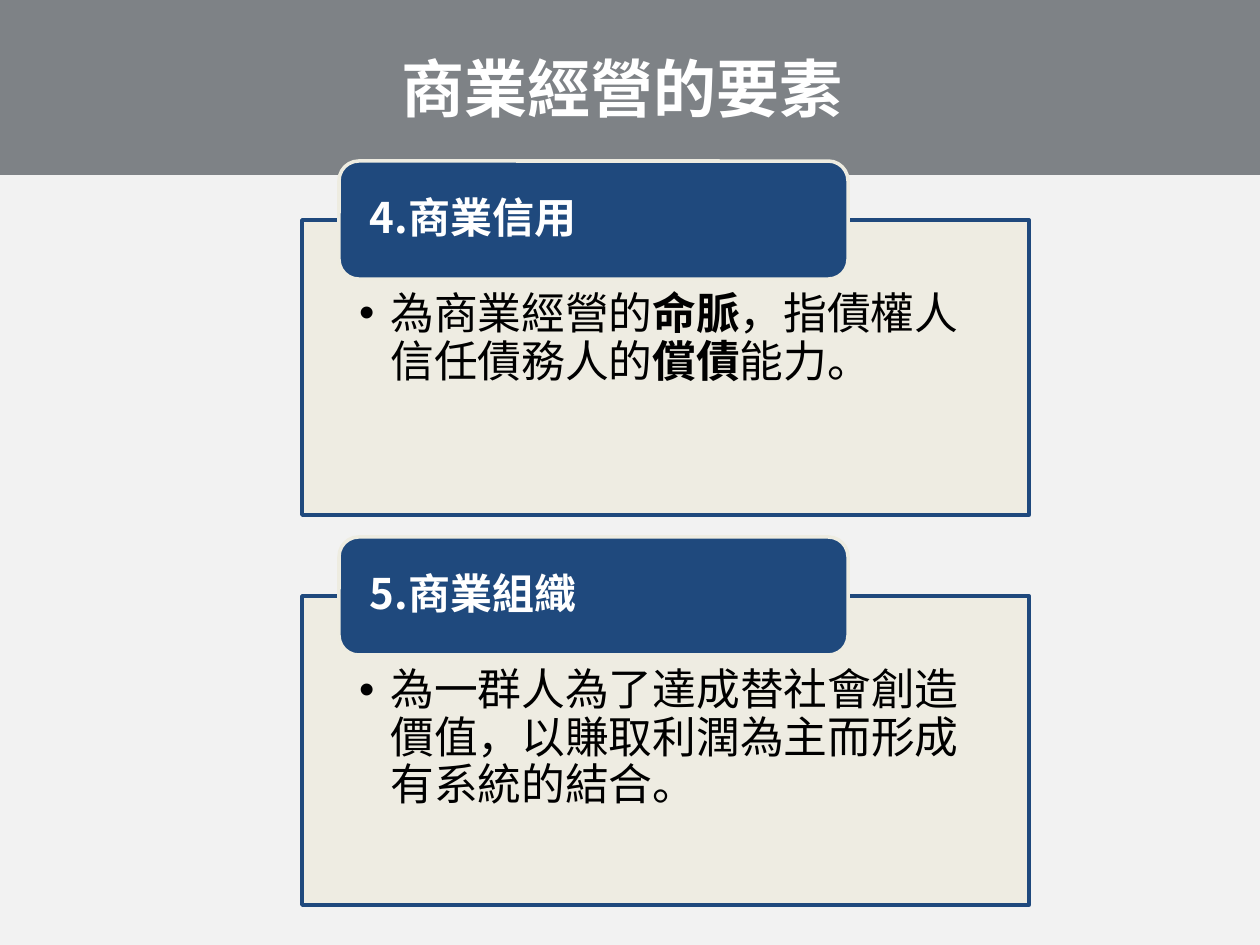
from lxml import etree
from pptx import Presentation, util as u
from pptx.dml.color import RGBColor
from pptx.enum import shapes, text
from pptx.oxml import ns

SCALE = 914400 / 126
FONT = "Noto Sans CJK SC"
PAPER = RGBColor(0xF2, 0xF2, 0xF2)
INK = RGBColor(0x0C, 0x14, 0x1C)
NAVY = RGBColor(0x1F, 0x49, 0x7D)
CREAM = RGBColor(0xEE, 0xEC, 0xE1)
WHITE = RGBColor(0xFF, 0xFF, 0xFF)
BLACK = RGBColor(0, 0, 0)

TITLE = "商業經營的要素"
PANELS = [
    ("4.商業信用", (302, 220, 727, 295),
     [("為商業經營的", False), ("命脈", True), ("，指債權人信任債務人的", False),
      ("償債", True), ("能力。", False)]),
    ("5.商業組織", (302, 596, 727, 309),
     [("為一群人為了達成替社會創造價值，以賺取利潤為主而形成有系統的結合。", False)]),
]


def px(length):
    """Turn px into EMU."""
    return u.Emu(round(length * SCALE))


def place(shape, box):
    """Move a shape to a box given in px."""
    shape.left, shape.top, shape.width, shape.height = map(px, box)


def paint(shape, fill, line=None, opacity=100):
    """Set the fill, its opacity and the outline of a shape."""
    shape.fill.solid()
    shape.fill.fore_color.rgb = fill
    if opacity < 100:
        color = shape.element.spPr.find(f".//{ns.qn('a:srgbClr')}")
        etree.SubElement(color, ns.qn("a:alpha"), val=str(opacity * 1000))
    if line is None:
        shape.line.fill.background()
    else:
        shape.line.color.rgb = line
        shape.line.width = u.Pt(2)


def set_frame(frame, anchor, insets):
    """Set wrapping, anchor and the left, top, right and bottom insets."""
    frame.word_wrap = True
    frame.auto_size = text.MSO_AUTO_SIZE.NONE
    frame.vertical_anchor = anchor
    (frame.margin_left, frame.margin_top,
     frame.margin_right, frame.margin_bottom) = map(px, insets)


def write(para, pieces, size, color, align=text.PP_ALIGN.LEFT):
    """Fill a paragraph with (wording, bold) pieces in one style."""
    para.alignment = align
    para.line_spacing = 0.9
    para.space_before = u.Pt(0)
    for wording, bold in pieces:
        span = para.add_run()
        span.text = wording
        span.font.name = FONT
        span.font.size = u.Pt(size)
        span.font.bold = bold
        span.font.color.rgb = color
        latin = span.font._element.find(ns.qn("a:latin"))
        latin.addnext(latin.makeelement(ns.qn("a:ea"), {"typeface": FONT}))


def add_header(page, box):
    """Place the band across the top and the title on it."""
    left, top, width, height = box
    band = page.shapes.add_shape(shapes.MSO_SHAPE.RECTANGLE, *map(px, box))
    band.shadow.inherit = False
    paint(band, INK, opacity=50)
    title = page.shapes.title
    title.element.addprevious(band.element)
    place(title, (left + 64, top + 22, width - 144, height - 66))
    set_frame(title.text_frame, text.MSO_ANCHOR.BOTTOM, (10, 5, 10, 5))
    write(title.text_frame.paragraphs[0], [(TITLE, True)], 36, WHITE,
          text.PP_ALIGN.CENTER)


def add_panel(page, body, box, heading, pieces):
    """Place a bulleted panel with a heading tab over its top edge."""
    left, top, width, height = box
    place(body, box)
    paint(body, CREAM, NAVY, 90)
    set_frame(body.text_frame, text.MSO_ANCHOR.TOP, (57, 72, 57, 24))
    para = body.text_frame.paragraphs[0]
    write(para, pieces, 25, BLACK)
    props = para._p.get_or_add_pPr()
    props.set("marL", str(u.Inches(0.25)))
    props.set("indent", str(-u.Inches(0.25)))

    tab = page.shapes.add_shape(shapes.MSO_SHAPE.ROUNDED_RECTANGLE,
                                *map(px, (left + 37, top - 59, 509, 118)))
    tab.shadow.inherit = False
    paint(tab, NAVY, CREAM)
    set_frame(tab.text_frame, text.MSO_ANCHOR.MIDDLE, (25, 0, 25, 0))
    write(tab.text_frame.paragraphs[0], [(heading, True)], 24, WHITE)


def main():
    """Build the slide and save it."""
    deck = Presentation()
    deck.slide_width, deck.slide_height = px(1260), px(945)
    page = deck.slides.add_slide(deck.slide_layouts.get_by_name("Two Content"))
    page.background.fill.solid()
    page.background.fill.fore_color.rgb = PAPER
    add_header(page, (0, -1, 1260, 176))
    for index, (heading, box, pieces) in enumerate(PANELS, 1):
        add_panel(page, page.placeholders[index], box, heading, pieces)
    deck.save("out.pptx")


if __name__ == "__main__":
    main()
